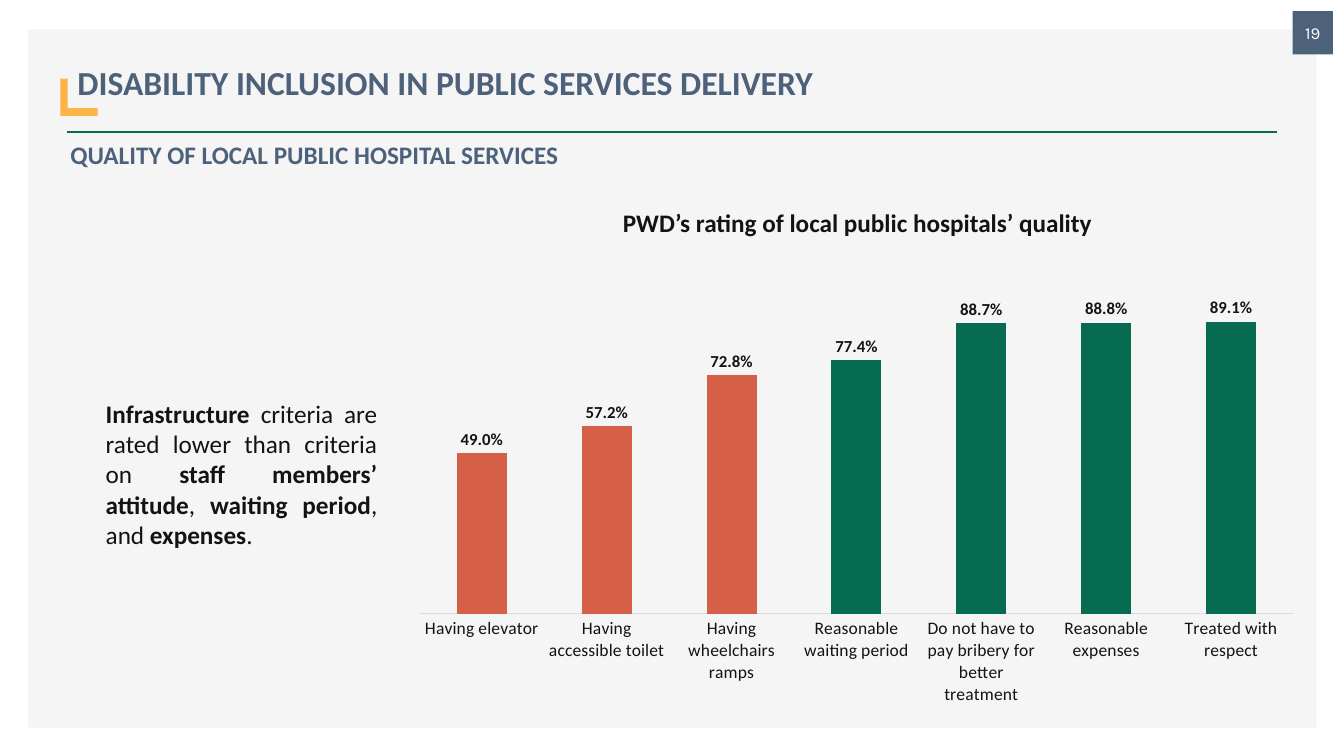
from lxml import etree
from pptx import Presentation
from pptx.chart.data import CategoryChartData
from pptx.dml.color import RGBColor
from pptx.enum.chart import XL_CHART_TYPE, XL_LABEL_POSITION, XL_TICK_MARK
from pptx.enum.shapes import MSO_CONNECTOR, MSO_SHAPE
from pptx.enum.text import MSO_ANCHOR, PP_ALIGN
from pptx.oxml.ns import qn
from pptx.util import Pt

PX = 9144  # 100 px to the inch
COLORS = {
    "white": "FFFFFF", "panel": "F5F5F5", "green": "076B51", "slate": "4E617A",
    "amber": "FDB347", "red": "D55F47", "ink": "131313", "axis": "DCDCDC",
}
BODY_FONT = "Calibri"
COLUMNS = XL_CHART_TYPE.COLUMN_CLUSTERED
LABEL_OUTSIDE = XL_LABEL_POSITION.OUTSIDE_END
NO_TICK = XL_TICK_MARK.NONE
STRAIGHT = MSO_CONNECTOR.STRAIGHT
RECTANGLE = MSO_SHAPE.RECTANGLE
TOP, MIDDLE = MSO_ANCHOR.TOP, MSO_ANCHOR.MIDDLE
LEFT, CENTER, JUSTIFY = PP_ALIGN.LEFT, PP_ALIGN.CENTER, PP_ALIGN.JUSTIFY

RATINGS = [  # criterion, share, bar colour
    ("Having elevator", 0.49, "red"),
    ("Having accessible toilet", 0.572, "red"),
    ("Having wheelchairs ramps", 0.728, "red"),
    ("Reasonable waiting period", 0.774, "green"),
    ("Do not have to pay bribery for better treatment", 0.887, "green"),
    ("Reasonable expenses", 0.888, "green"),
    ("Treated with respect", 0.891, "green"),
]
FINDING = [  # text, bold
    ("Infrastructure ", True),
    ("criteria are rated lower than criteria on ", False),
    ("staff members’ attitude", True),
    (", ", False),
    ("waiting period", True),
    (", and ", False),
    ("expenses", True),
    (".", False),
]


def color(name):
    return RGBColor.from_string(COLORS[name])


def emu(*lengths):
    return [length * PX for length in lengths]


def style_font(font, size, color_name, bold=False, name=BODY_FONT):
    font.name, font.size, font.bold = name, Pt(size), bold
    font.color.rgb = color(color_name)


def add_rectangle(slide, box, fill):
    shape = slide.shapes.add_shape(RECTANGLE, *emu(*box))
    shape.shadow.inherit = False
    shape.fill.solid()
    shape.fill.fore_color.rgb = color(fill)
    shape.line.fill.background()
    return shape


def write_text(shape, runs, size, color_name, align, anchor=TOP, name=BODY_FONT):
    frame = shape.text_frame
    frame.word_wrap = True
    frame.vertical_anchor = anchor
    paragraph = frame.paragraphs[0]
    paragraph.alignment = align
    for text, bold in runs:
        run = paragraph.add_run()
        run.text = text
        style_font(run.font, size, color_name, bold, name)
    return paragraph


def add_text(slide, box, runs, color_name, align):
    text_box = slide.shapes.add_textbox(*emu(*box))
    write_text(text_box, runs, 18, color_name, align)


def add_frame(slide, box):
    """Grey panel, green rule and page number."""
    left, top, width, height = box
    add_rectangle(slide, box, "panel")
    rule_y = top + 102
    rule = slide.shapes.add_connector(
        STRAIGHT, *emu(left + 38, rule_y, left + 1239, rule_y))
    rule.line.color.rgb = color("green")
    rule.line.width = Pt(2)
    etree.SubElement(rule._element.spPr, qn("a:effectLst"))
    badge = add_rectangle(slide, (left + width - 24, top - 18, 40, 43), "slate")
    write_text(badge, [("19", False)], 12, "white", CENTER, MIDDLE, "Karla")


def add_heading(slide, box):
    """Title with its amber corner, and the subtitle below the rule."""
    left, top, width, height = box
    add_rectangle(slide, (left, top + 42, 37, 37), "amber")
    title = add_rectangle(slide, (left + 7, top, width - 7, 71), "panel")
    paragraph = write_text(
        title, [("DISABILITY INCLUSION IN PUBLIC SERVICES DELIVERY", True)],
        24, "slate", LEFT, MIDDLE)
    paragraph.line_spacing = 1.5
    add_text(slide, (left, top + height - 40, width - 32, 40),
             [("QUALITY OF LOCAL PUBLIC HOSPITAL SERVICES", True)],
             "slate", JUSTIFY)


def set_plot_layout(chart, x, y, width, height):
    plot_area = chart._chartSpace.chart.plotArea
    for old in plot_area.findall(qn("c:layout")):
        plot_area.remove(old)
    layout = etree.Element(qn("c:layout"))
    manual = etree.SubElement(layout, qn("c:manualLayout"))
    settings = [("layoutTarget", "inner"), ("xMode", "edge"), ("yMode", "edge"),
                ("x", x), ("y", y), ("w", width), ("h", height)]
    for tag, value in settings:
        etree.SubElement(manual, qn("c:" + tag)).set("val", str(value))
    plot_area.insert(0, layout)


def add_rating_chart(slide, box):
    """Chart heading above a column chart of the ratings."""
    left, top, width, height = box
    add_text(slide, (left + 108, top, 693, 40),
             [("PWD’s rating of local public hospitals’ quality", True)],
             "ink", CENTER)

    data = CategoryChartData(number_format="0.0%")
    data.categories = [criterion for criterion, _, _ in RATINGS]
    data.add_series("Rating", [share for _, share, _ in RATINGS])
    chart = slide.shapes.add_chart(
        COLUMNS, *emu(left, top + 72, width, height - 72), data).chart
    chart.has_legend = False
    chart.has_title = False
    style_font(chart.font, 10, "ink", name="Arial")
    set_plot_layout(chart, 0.022, 0.026, 0.956, 0.755)

    # Axes
    value_axis = chart.value_axis
    value_axis.minimum_scale, value_axis.maximum_scale = 0, 1
    value_axis.has_major_gridlines = False
    value_axis.visible = False
    category_axis = chart.category_axis
    category_axis.major_tick_mark = NO_TICK
    category_axis.minor_tick_mark = NO_TICK
    category_axis.format.line.color.rgb = color("axis")
    category_axis.format.line.width = Pt(0.75)
    style_font(category_axis.tick_labels.font, 12.5, "ink")

    # Columns and their labels
    plot = chart.plots[0]
    plot.gap_width, plot.overlap = 150, -25
    plot.vary_by_categories = False
    series = plot.series[0]
    series.format.fill.solid()
    series.format.fill.fore_color.rgb = color("green")
    for index, (_, _, bar_color) in enumerate(RATINGS):
        if bar_color != "green":
            fill = series.points[index].format.fill
            fill.solid()
            fill.fore_color.rgb = color(bar_color)
    labels = series.data_labels
    labels.show_value = True
    labels.number_format = "0.0%"
    labels.number_format_is_linked = False
    labels.position = LABEL_OUTSIDE
    style_font(labels.font, 12, "ink", True)


def main():
    presentation = Presentation()
    presentation.slide_width, presentation.slide_height = emu(1333, 750)
    slide = presentation.slides.add_slide(presentation.slide_layouts[6])
    add_frame(slide, (28, 29, 1278, 693))
    add_heading(slide, (60, 36, 1214, 137))
    add_rating_chart(slide, (396, 201, 907, 502))
    add_text(slide, (95, 390, 289, 162), FINDING, "ink", JUSTIFY)
    presentation.save("out.pptx")


if __name__ == "__main__":
    main()
